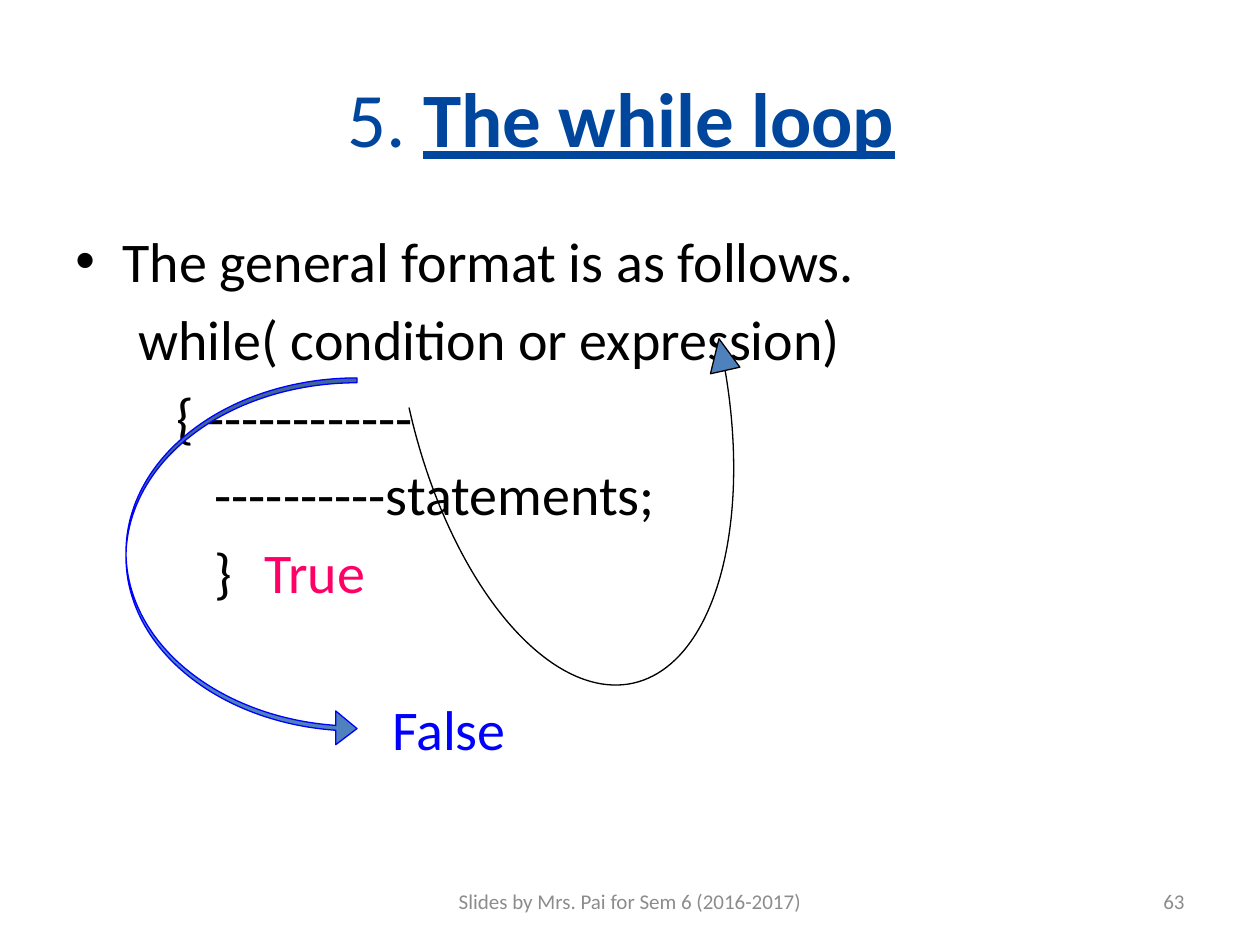
"""Build a slide that shows the general format of the while loop."""
from dataclasses import dataclass

import pptx
import pptx.dml.color
import pptx.enum.shapes
import pptx.enum.text
import pptx.oxml.ns
import pptx.util
from lxml import etree

Pt = pptx.util.Pt
Align = pptx.enum.text.PP_ALIGN
Anchor = pptx.enum.text.MSO_ANCHOR
Preset = pptx.enum.shapes.MSO_SHAPE


@dataclass(frozen=True)
class Theme:
    font: str = "Calibri"
    title: str = "00469C"
    ink: str = "000000"
    true: str = "FF0066"
    false: str = "0000FF"
    arrow: str = "4F81BD"
    muted: str = "8C8C8C"
    title_size: int = 44
    body_size: int = 32
    footer_size: int = 12


THEME = Theme()


def rgb(code):
    return pptx.dml.color.RGBColor.from_string(code)


def style(font, size, color):
    font.name = THEME.font
    font.size = Pt(size)
    font.color.rgb = rgb(color)


def place(shape, left, top, width, height):
    shape.left, shape.top = Pt(left), Pt(top)
    shape.width, shape.height = Pt(width), Pt(height)


def add_title(slide, number, heading):
    title = slide.shapes.title
    place(title, 36, 21.6, 648, 90)
    title.text_frame.vertical_anchor = Anchor.MIDDLE
    paragraph = title.text_frame.paragraphs[0]
    paragraph.alignment = Align.CENTER
    style(paragraph.font, THEME.title_size, THEME.title)
    paragraph.add_run().text = number
    emphasis = paragraph.add_run()
    emphasis.text = heading
    emphasis.font.bold = emphasis.font.underline = True
    paragraph.add_run().text = " "


def add_text_box(slide, left, top, width, height, anchor):
    box = slide.shapes.add_textbox(Pt(left), Pt(top), Pt(width), Pt(height))
    box.text_frame.word_wrap = True
    box.text_frame.vertical_anchor = anchor
    return box.text_frame


def add_line(paragraph, text, color=THEME.ink, margin=0, first=0, before=6, bullet=None, tab=None):
    paragraph.space_before = Pt(before)
    properties = paragraph._p.get_or_add_pPr()
    properties.set("marL", str(Pt(margin)))
    properties.set("indent", str(Pt(first)))
    qn = pptx.oxml.ns.qn
    if bullet:
        etree.SubElement(properties, qn("a:buFont"), typeface="Arial")
        etree.SubElement(properties, qn("a:buChar"), char=bullet)
    if tab:
        stops = etree.SubElement(properties, qn("a:tabLst"))
        etree.SubElement(stops, qn("a:tab"), pos=str(Pt(tab)), algn="l")
    style(paragraph.font, THEME.body_size, color)
    paragraph.add_run().text = text


def add_loop_format(slide):
    body = add_text_box(slide, 36, 126, 648, 356.4, Anchor.TOP)
    lines = [
        dict(text="The general format is as follows.", margin=27, first=-27, bullet="•"),
        dict(text="while( condition or expression)", first=36),
        dict(text="{ ------------", first=58),
        dict(text="----------statements;", first=79.5),
        dict(text="}\t", first=79.5, tab=191),
        dict(text="False", color=THEME.false, first=181, before=51),
    ]
    for index, line in enumerate(lines):
        paragraph = body.add_paragraph() if index else body.paragraphs[0]
        add_line(paragraph, **line)
    true_label = body.paragraphs[4].add_run()
    true_label.text = "True"
    true_label.font.color.rgb = rgb(THEME.true)


def add_curved_arrow(slide, preset, bounds, adjustments, outline, rotation=0):
    arrow = slide.shapes.add_shape(preset, *map(Pt, bounds))
    arrow.shadow.inherit = False
    arrow.rotation = rotation
    for index, value in enumerate(adjustments):
        arrow.adjustments[index] = value
    arrow.fill.solid()
    arrow.fill.fore_color.rgb = rgb(THEME.arrow)
    arrow.line.color.rgb = rgb(outline)
    arrow.line.width = Pt(0.75)


def add_footer(slide, text, left, width, alignment):
    footer = add_text_box(slide, left, 500.4, width, 28.8, Anchor.MIDDLE)
    paragraph = footer.paragraphs[0]
    paragraph.alignment = alignment
    style(paragraph.font, THEME.footer_size, THEME.muted)
    paragraph.add_run().text = text


def main():
    deck = pptx.Presentation()
    deck.slide_width, deck.slide_height = Pt(720), Pt(540)
    slide = deck.slides.add_slide(deck.slide_layouts.get_by_name("Title Only"))
    add_title(slide, "5. ", "The while loop")
    add_loop_format(slide)
    add_curved_arrow(slide, Preset.CURVED_UP_ARROW, (251.3, 210.2, 190, 181.4),
                     (0, 0.095, 0.102), THEME.ink, rotation=347.4)
    add_curved_arrow(slide, Preset.CURVED_RIGHT_ARROW, (72, 216, 132, 210),
                     (0.021, 0.146, 0.092), THEME.false)
    add_footer(slide, "Slides by Mrs. Pai for Sem 6 (2016-2017)", 246, 228, Align.CENTER)
    add_footer(slide, "63", 516, 168, Align.RIGHT)
    deck.save("out.pptx")


if __name__ == "__main__":
    main()
